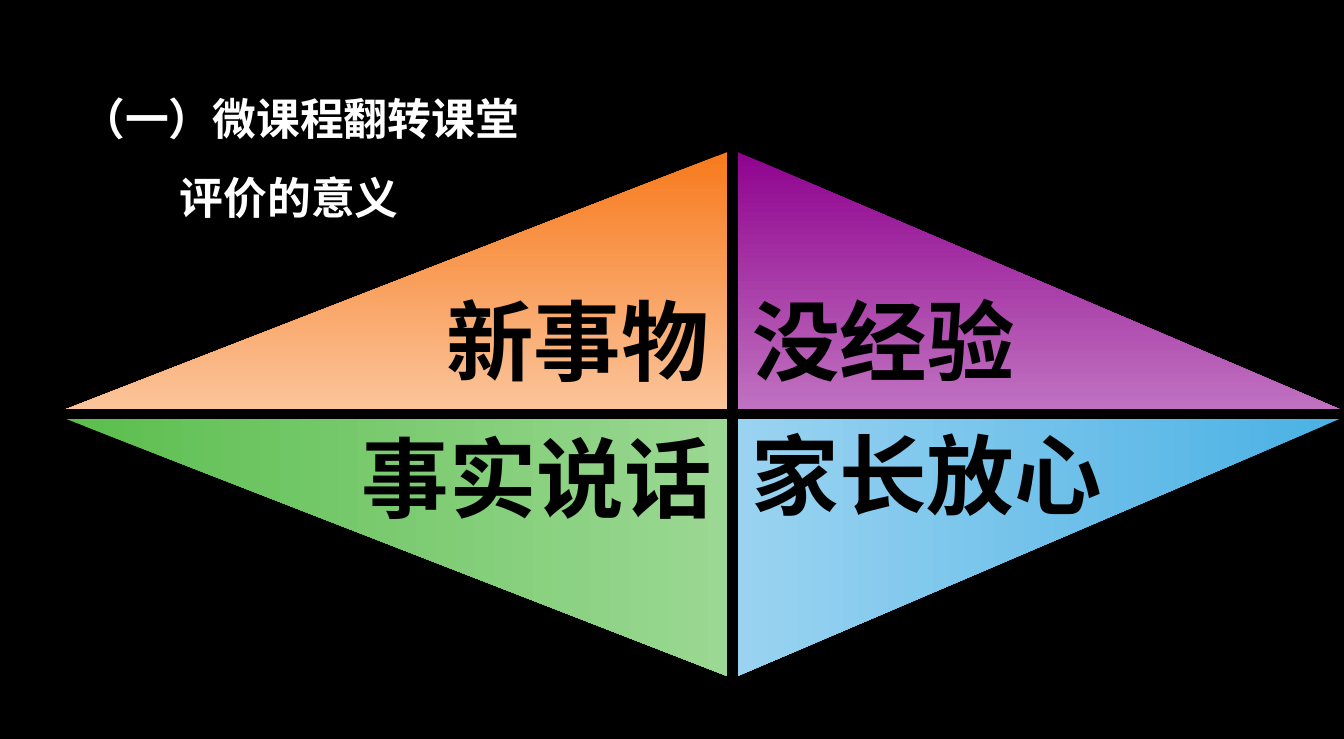
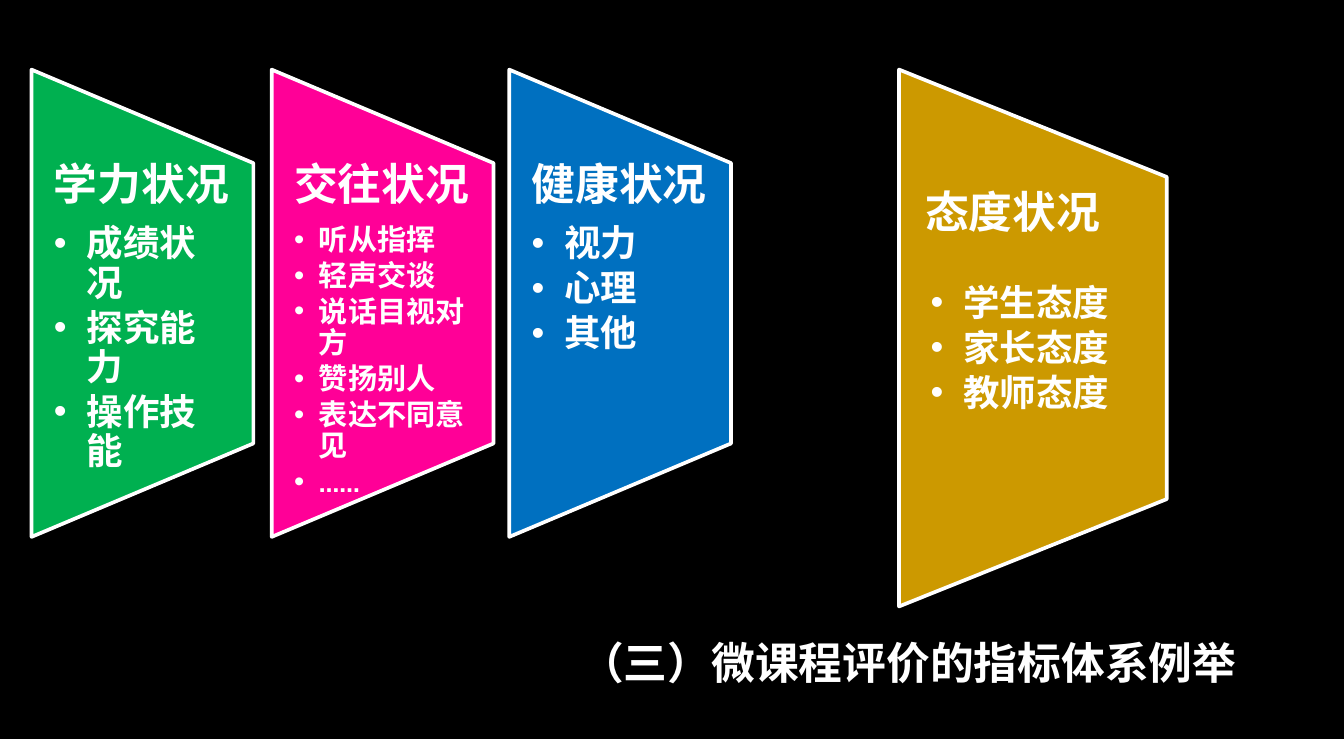
from pptx import Presentation
from pptx.dml.color import RGBColor
from pptx.enum.shapes import MSO_SHAPE
from pptx.enum.text import MSO_ANCHOR, MSO_AUTO_SIZE, PP_ALIGN
from pptx.oxml.ns import qn
from pptx.util import Pt
from lxml.etree import SubElement

PX = 9144
BLACK, WHITE = "000000", "FFFFFF"
HEADING_FONT, PANEL_FONT = "Noto Sans CJK SC", "Cabin"


def color(value):
    return RGBColor.from_string(value)


def write(shape, lines, box, size=24, font=HEADING_FONT, ink=WHITE, align=PP_ALIGN.LEFT,
          spacing=1.0, after=0, inset=(10, 5), bullet_indent=0, first=True):
    shape.left, shape.top, shape.width, shape.height = [value * PX for value in box]
    frame = shape.text_frame
    frame.word_wrap = True
    frame.auto_size = MSO_AUTO_SIZE.NONE
    frame.vertical_anchor = MSO_ANCHOR.TOP
    frame.margin_left = frame.margin_right = inset[0] * PX
    frame.margin_top = frame.margin_bottom = inset[1] * PX
    for line in lines:
        paragraph = frame.paragraphs[0] if first else frame.add_paragraph()
        first = False
        paragraph.alignment = align
        paragraph.line_spacing = spacing
        paragraph.space_before = Pt(0)
        paragraph.space_after = Pt(after)
        if bullet_indent:
            properties = paragraph._p.get_or_add_pPr()
            properties.set("marL", str(bullet_indent * PX))
            properties.set("indent", str(-bullet_indent * PX))
            SubElement(properties, qn("a:buFont")).set("typeface", "Arial")
            SubElement(properties, qn("a:buChar")).set("char", "•")
        run = paragraph.add_run()
        run.text = line
        run.font.size = Pt(size)
        run.font.bold = True
        run.font.name = font
        run.font.color.rgb = color(ink)
        SubElement(run._r.get_or_add_rPr(), qn("a:ea")).set("typeface", font)


def add_turned(slide, preset, left, top, width, height, rotation):
    across, down = (height, width) if rotation else (width, height)
    shape = slide.shapes.add_shape(
        preset, (2 * left + width - across) * PX // 2, (2 * top + height - down) * PX // 2,
        across * PX, down * PX)
    shape.rotation = rotation
    shape.shadow.inherit = False
    return shape


presentation = Presentation()
presentation.slide_width, presentation.slide_height = 1024 * PX, 563 * PX
background = presentation.slide_master.background.fill
background.solid()
background.fore_color.rgb = color(BLACK)
title_only = presentation.slide_layouts[5]

slide = presentation.slides.add_slide(title_only)
title = slide.shapes.title
write(title, ["（一）微课程翻转课堂", "评价的意义"], (52, 45, 365, 131), spacing=1.5)
title.text_frame.paragraphs[1]._p.get_or_add_pPr().set("marL", str(75 * PX))

columns = [(50, 504), (562, 459)]
rows = [116, 319]
triangles = [
    (0, 0, 0, True, "F77A1D", "FBC49A"),
    (1, 0, 0, False, "8F038F", "C072C0"),
    (1, 1, 90, False, "4AB1E4", "9AD3F1"),
    (0, 1, 270, True, "5BBE4E", "9BD893"),
]
for column, row, rotation, flipped, start, end in triangles:
    left, width = columns[column]
    triangle = add_turned(slide, MSO_SHAPE.RIGHT_TRIANGLE, left, rows[row], width, 196, rotation)
    if flipped:
        triangle._element.spPr.get_or_add_xfrm().set("flipH", "1")
    triangle.line.fill.background()
    triangle.fill.gradient()
    triangle.fill.gradient_angle = 270
    for stop, shade in zip(triangle.fill.gradient_stops, (start, end)):
        stop.color.rgb = color(shade)

labels = [
    ("新事物", (328, 214, 224, 91), PP_ALIGN.CENTER),
    ("没经验", (562, 214, 222, 91), PP_ALIGN.CENTER),
    ("家长放心", (563, 316, 318, 91), PP_ALIGN.LEFT),
    ("事实说话", (250, 318, 302, 91), PP_ALIGN.RIGHT),
]
for label, box, align in labels:
    write(slide.shapes.add_textbox(0, 0, 0, 0), [label], box, size=48, ink=BLACK, align=align)

slide = presentation.slides.add_slide(title_only)
write(slide.shapes.title, ["（三）微课程评价的指标体系例举"], (432, 479, 537, 50))

panels = [
    (24, 169, 356, "00B050", "学力状况", 20, 25, ["成绩状况", "探究能力", "操作技能"]),
    (207, 169, 356, "FF0097", "交往状况", 16, 19,
     ["听从指挥", "轻声交谈", "说话目视对方", "赞扬别人", "表达不同意见", "……"]),
    (388, 169, 356, "0070C0", "健康状况", 20, 25, ["视力", "心理", "其他"]),
    (685, 204, 409, "CC9900", "态度状况", 20, 25, ["学生态度", "家长态度", "教师态度"]),
]
for left, width, height, fill, heading, size, indent, items in panels:
    panel = add_turned(slide, MSO_SHAPE.FLOWCHART_MANUAL_OPERATION, left, 53, width, height, 270)
    panel.fill.solid()
    panel.fill.fore_color.rgb = color(fill)
    panel.line.color.rgb = color(WHITE)
    panel.line.width = Pt(2)
    body = slide.shapes.add_textbox(0, 0, 0, 0)
    panel_style = dict(font=PANEL_FONT, spacing=0.9)
    separate = heading == "态度状况"
    if separate:
        box, inset = (left, 217, width, 246), (24, 0)
        write(slide.shapes.add_textbox(0, 0, 0, 0), [heading], (695, 140, 158, 46), **panel_style)
    else:
        box, inset = (left, 124, width, 213), (17, 0)
        write(body, [heading], box, inset=inset, after=8.4, **panel_style)
    write(body, items, box, size=size, inset=inset, after=size * 0.15,
          bullet_indent=indent, first=separate, **panel_style)

presentation.save("out.pptx")
